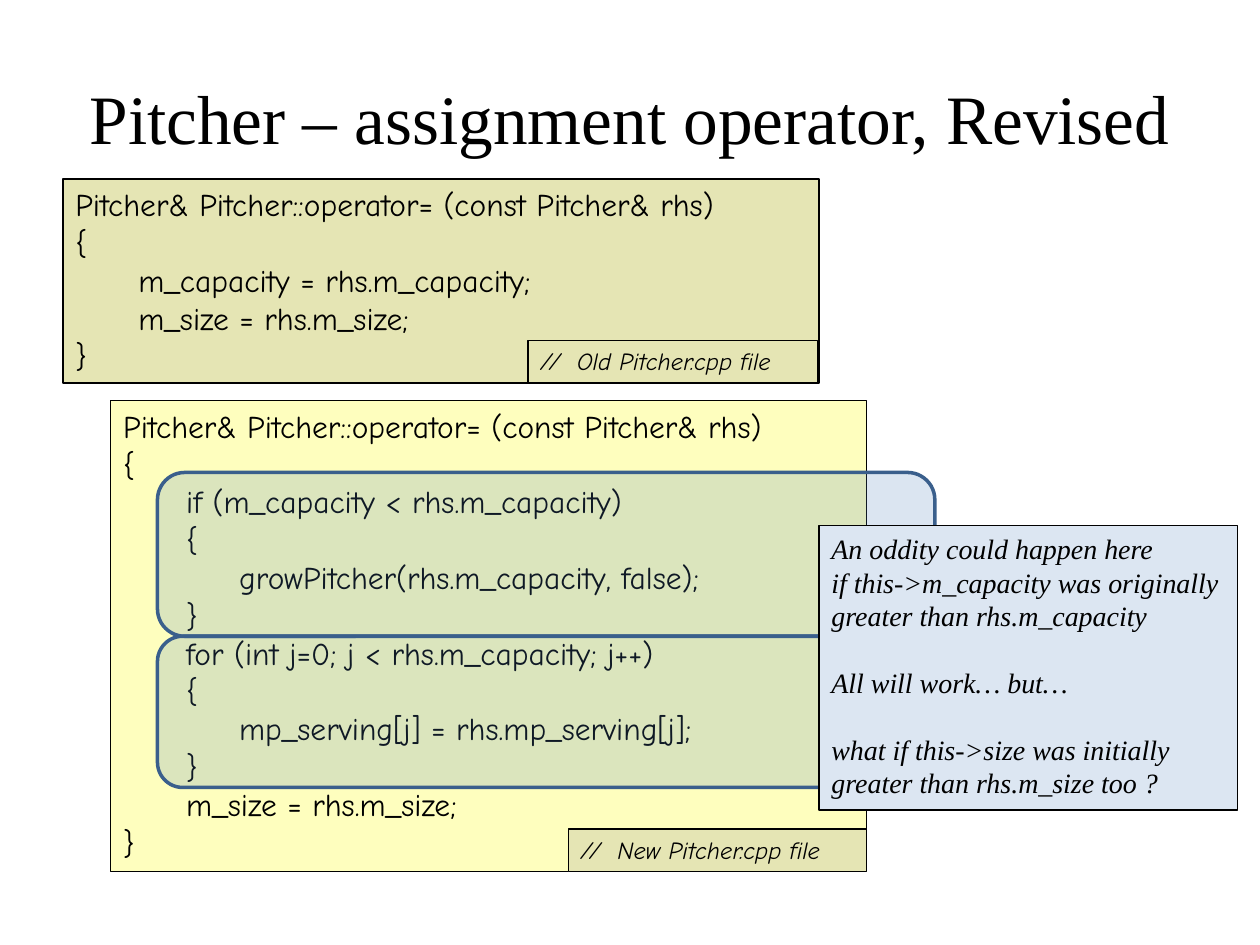
from pptx import Presentation
from pptx.dml.color import RGBColor
from pptx.enum.shapes import MSO_SHAPE as Kind
from pptx.enum.text import MSO_ANCHOR as Anchor, MSO_AUTO_SIZE as Fit, PP_ALIGN as Align
from pptx.oxml.ns import qn
from pptx.util import Inches, Pt
from lxml.etree import SubElement

SANS, SERIF = "Comic Neue", "Times New Roman"
BLACK, KHAKI, CREAM, PALE = "000000", "E5E5B4", "FEFEBE", "DCE6F2"
BLUE, NAVY = "4F81BD", "3A5F8C"
INDENTS = (0, 0.5, 0.92)


def rgb(color):
    return RGBColor.from_string(color)


class Deck:
    def __init__(self):
        self.file = Presentation()
        self.file.slide_width, self.file.slide_height = Inches(10), Inches(7.5)
        self.slide = self.file.slides.add_slide(self.file.slide_layouts[5])

    def add_text(self, para, text, size, font, italic=False):
        run = para.add_run()
        run.text = text
        run.font.size, run.font.name, run.font.italic = Pt(size), font, italic
        run.font.color.rgb = rgb(BLACK)

    def title(self, text, box, size):
        shape = self.slide.shapes.title
        shape.left, shape.top, shape.width, shape.height = map(Inches, box)
        frame = shape.text_frame
        frame.auto_size, frame.vertical_anchor = Fit.NONE, Anchor.MIDDLE
        para = frame.paragraphs[0]
        para.alignment = Align.CENTER
        self.add_text(para, text, size, SERIF)

    def shape(self, kind, box, fill, line, width):
        shape = self.slide.shapes.add_shape(kind, *map(Inches, box))
        shape.shadow.inherit = False
        shape.fill.solid()
        shape.fill.fore_color.rgb = rgb(fill)
        shape.line.color.rgb = rgb(line)
        shape.line.width = Pt(width)
        return shape

    def panel(self, box, fill, lines, size, font=SANS, italic=False):
        """Each line is (indent level, text, space before in points)."""
        frame = self.shape(Kind.RECTANGLE, box, fill, BLACK, 0.75).text_frame
        frame.word_wrap, frame.vertical_anchor = True, Anchor.TOP
        for i, (level, text, gap) in enumerate(lines):
            para = frame.add_paragraph() if i else frame.paragraphs[0]
            para.alignment, para.space_before = Align.LEFT, Pt(gap)
            props = para._p.get_or_add_pPr()
            props.set("marL", str(Inches(INDENTS[level])))
            props.set("indent", "0")
            self.add_text(para, text, size, font, italic)

    def code(self, box, fill, body):
        lines = [(0, HEAD), (0, "{"), *body, (0, "}")]
        self.panel(box, fill, [(level, text, 0) for level, text in lines], 18)

    def tag(self, box, text):
        self.panel(box, KHAKI, [(0, text, 0)], 14, italic=True)

    def mark(self, box):
        shape = self.shape(Kind.ROUNDED_RECTANGLE, box, BLUE, NAVY, 2)
        color = shape.fill._xPr.find(qn("a:solidFill"))[0]
        SubElement(color, qn("a:alpha")).set("val", "20000")


HEAD = "Pitcher& Pitcher::operator= (const Pitcher& rhs)"
SIZE = (1, "m_size = rhs.m_size;")


def block(head, body):
    return [(1, head), (1, "{"), (2, body), (1, "}")]


def main():
    deck = Deck()
    deck.title("Pitcher – assignment operator, Revised", (0.5, 0.3, 9, 1.25), 39.6)

    # Old version
    deck.code((0.5, 1.42, 6, 1.62), KHAKI, [(1, "m_capacity = rhs.m_capacity;"), SIZE])
    deck.tag((4.19, 2.7, 2.3, 0.34), "//  Old Pitcher.cpp file")

    # New version
    deck.code((0.88, 3.18, 6, 3.74), CREAM, [
        *block("if (m_capacity < rhs.m_capacity)", "growPitcher(rhs.m_capacity, false);"),
        *block("for (int j=0; j < rhs.m_capacity; j++)", "mp_serving[j] = rhs.mp_serving[j];"),
        SIZE])
    deck.tag((4.51, 6.58, 2.37, 0.34), "//  New Pitcher.cpp file")

    # Highlights over the two blocks
    for top, height in ((3.75, 1.3), (5.05, 1.2)):
        deck.mark((1.25, top, 6.17, height))

    # Remark, in three groups one line apart
    gap = 19
    deck.panel((6.5, 4.17, 3.32, 2.26), PALE, [
        (0, "An oddity could happen here", 0),
        (0, "if this->m_capacity was originally", 0),
        (0, "greater than rhs.m_capacity", 0),
        (0, "All will work… but…", gap),
        (0, "what if this->size was initially", gap),
        (0, "greater than rhs.m_size too ?", 0)], 16, SERIF, True)

    deck.file.save("out.pptx")


if __name__ == "__main__":
    main()
